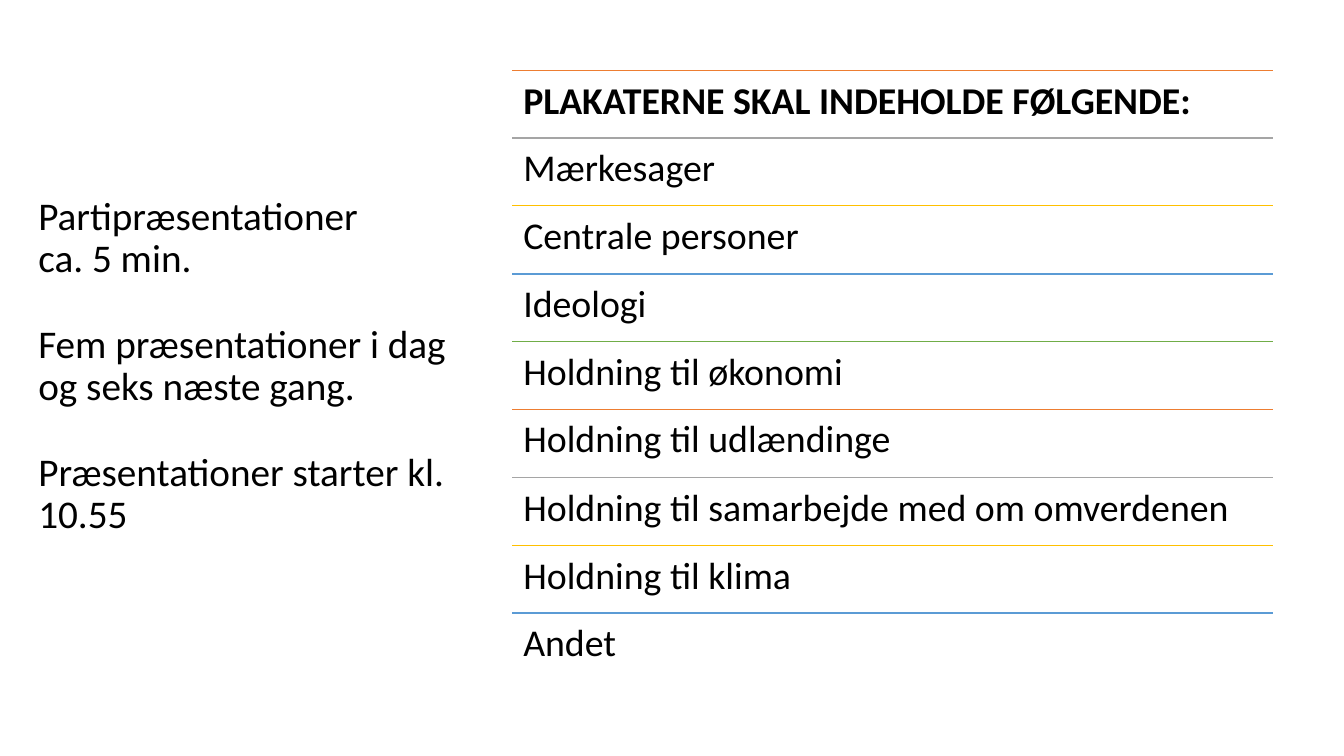
from itertools import cycle

from pptx import Presentation
from pptx import util as u
from pptx.dml.color import RGBColor
from pptx.enum import shapes, text
from pptx.oxml.ns import qn
from lxml import etree

PX = 9144  # EMU per px, 100 px to the inch

BLACK = RGBColor(0x00, 0x00, 0x00)
ORANGE = RGBColor(0xED, 0x7D, 0x31)
GREY = RGBColor(0xA5, 0xA5, 0xA5)
YELLOW = RGBColor(0xFF, 0xC0, 0x00)
BLUE = RGBColor(0x5B, 0x9B, 0xD5)
GREEN = RGBColor(0x70, 0xAD, 0x47)

LIST_LEFT, LIST_TOP, LIST_WIDTH = 508, 70, 755
LAST_ROW_OFFSET, ROW_HEIGHT = 538, 67

requirements = [
    "PLAKATERNE SKAL INDEHOLDE FØLGENDE:",
    "Mærkesager",
    "Centrale personer",
    "Ideologi",
    "Holdning til økonomi",
    "Holdning til udlændinge",
    "Holdning til samarbejde med om omverdenen",
    "Holdning til klima",
    "Andet",
]
schedule = [
    "Partipræsentationer\vca. 5 min.",
    "Fem præsentationer i dag og seks næste gang.",
    "Præsentationer starter kl. 10.55",
]


def write(frame, paragraphs, size, bold=False, inset=10, gap=0,
          anchor=text.MSO_ANCHOR.TOP):
    frame.word_wrap = True
    frame.auto_size = text.MSO_AUTO_SIZE.NONE
    frame.vertical_anchor = anchor
    frame.margin_left = frame.margin_right = inset * PX
    frame.margin_top = frame.margin_bottom = inset * PX
    for i, wording in enumerate(paragraphs):
        paragraph = frame.add_paragraph() if i else frame.paragraphs[0]
        paragraph.text = wording
        paragraph.alignment = text.PP_ALIGN.LEFT
        paragraph.line_spacing = 0.9
        paragraph.space_before = u.Pt(gap if i else 0)
        for run in paragraph.runs:
            run.font.name = "Calibri"
            run.font.size = u.Pt(size)
            run.font.bold = bold
            run.font.color.rgb = BLACK


prs = Presentation()
prs.slide_width, prs.slide_height = 1333 * PX, 750 * PX
slide = prs.slides.add_slide(prs.slide_layouts[5])

# Schedule on the left
title = slide.shapes.title
title.left, title.top = 28 * PX, 48 * PX
title.width, title.height = 469 * PX, 632 * PX
write(title.text_frame, schedule, 28, gap=31, anchor=text.MSO_ANCHOR.MIDDLE)

# Requirements on the right, each under a coloured rule
poster_list = slide.shapes.add_group_shape()
rule_colours = cycle([ORANGE, GREY, YELLOW, BLUE, GREEN])
for row, (requirement, colour) in enumerate(zip(requirements, rule_colours)):
    top = LIST_TOP + round(row * LAST_ROW_OFFSET / (len(requirements) - 1))
    rule = poster_list.shapes.add_connector(
        shapes.MSO_CONNECTOR.STRAIGHT, LIST_LEFT * PX, top * PX,
        (LIST_LEFT + LIST_WIDTH) * PX, top * PX)
    rule.line.color.rgb = colour
    rule.line.width = u.Pt(1)
    etree.SubElement(rule._element.spPr, qn("a:effectLst"))

    entry = poster_list.shapes.add_textbox(
        LIST_LEFT * PX, top * PX, LIST_WIDTH * PX, ROW_HEIGHT * PX)
    write(entry.text_frame, [requirement], 27, bold=row == 0, inset=11)

prs.save("out.pptx")
